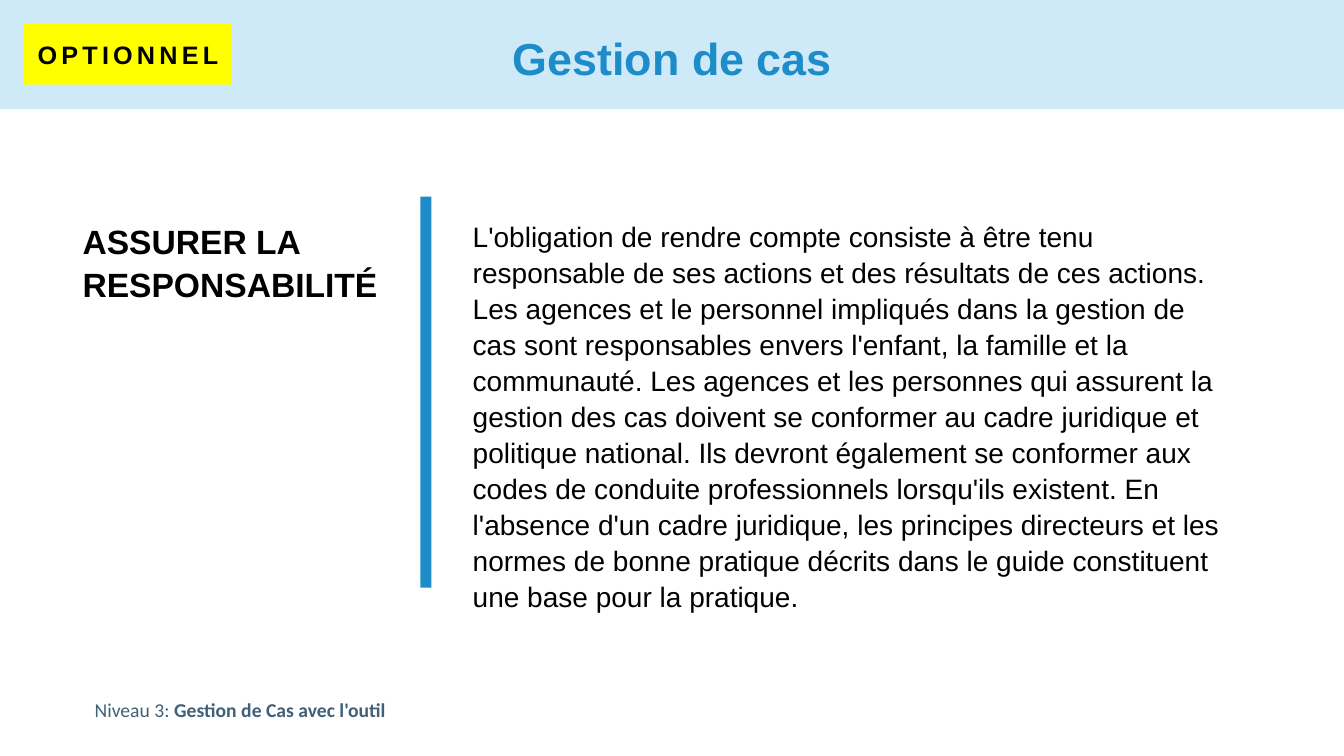
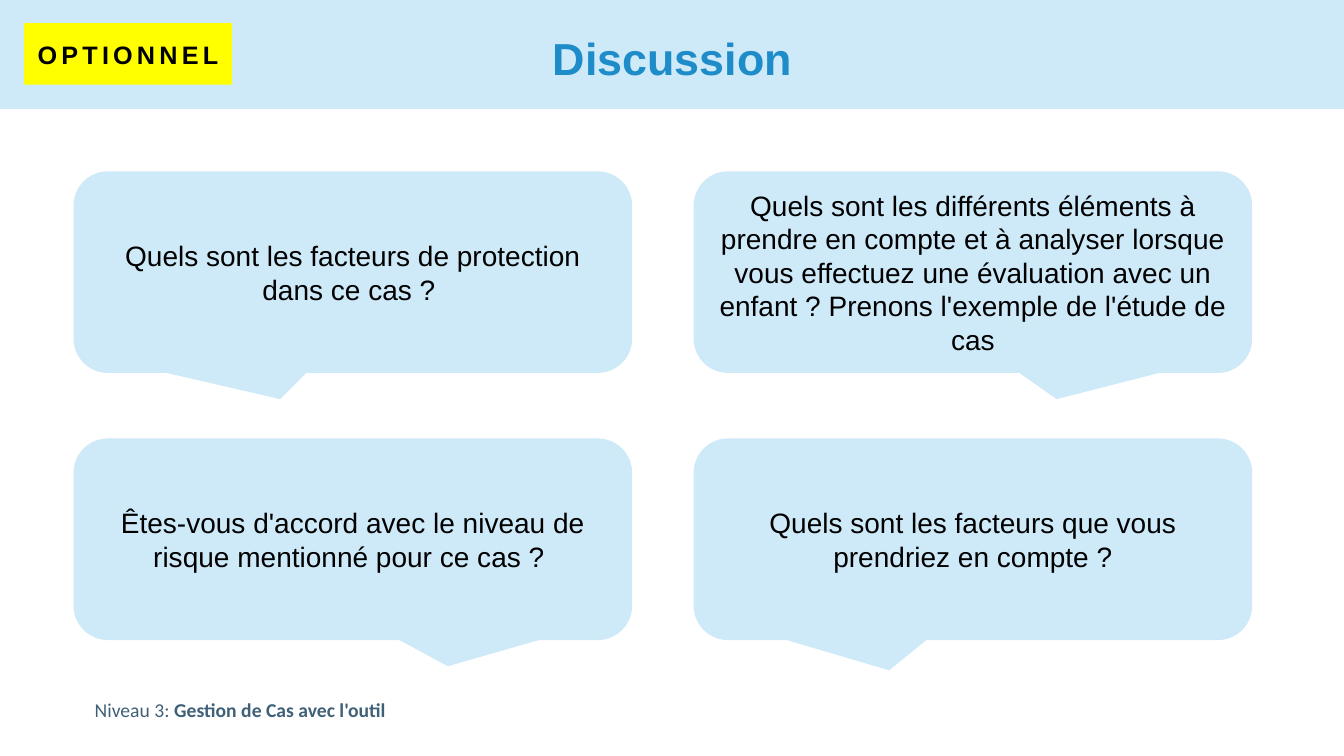
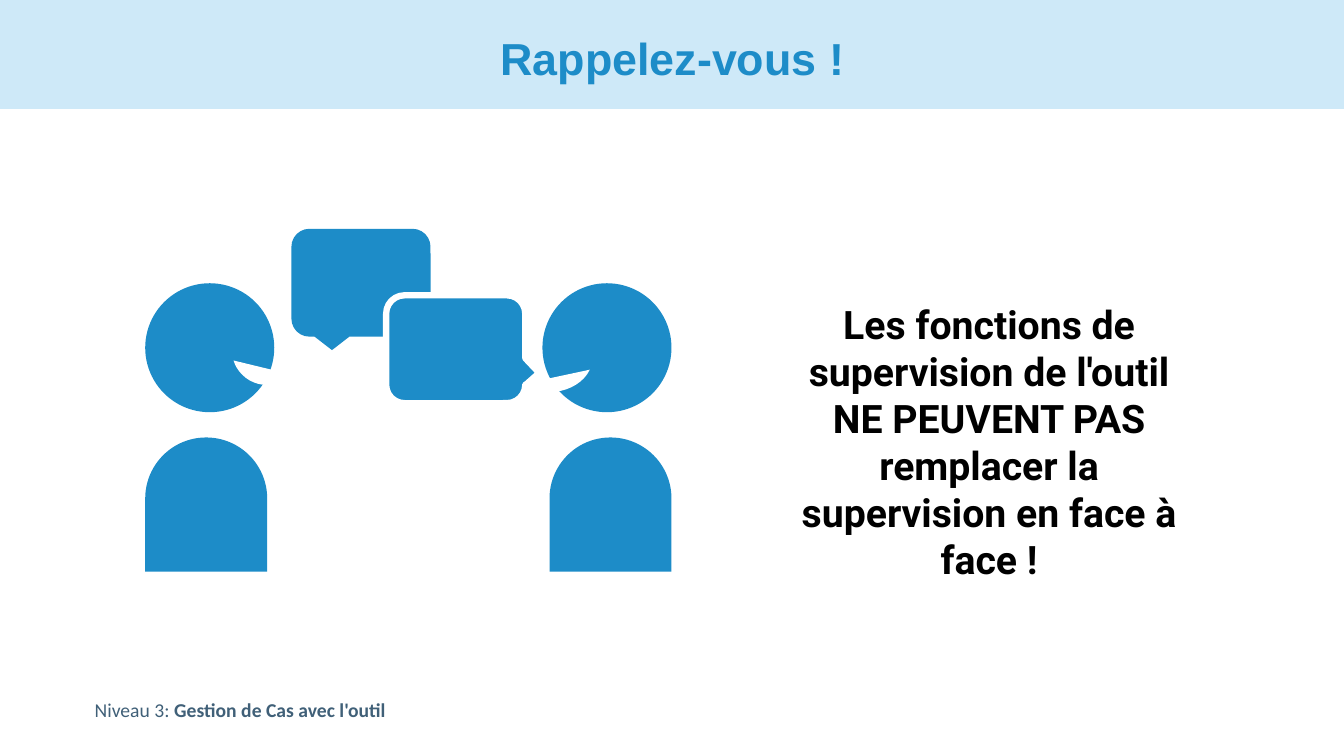
import pptx
import pptx.util
from pptx.dml.color import RGBColor
from pptx.enum.shapes import MSO_SHAPE
from pptx.enum.text import MSO_ANCHOR, MSO_AUTO_SIZE, PP_ALIGN
from pptx.util import Inches

PALE_BLUE = RGBColor(0xCE, 0xE9, 0xF8)
BLUE = RGBColor(0x1D, 0x8C, 0xC8)
SLATE = RGBColor(0x40, 0x60, 0x78)
YELLOW = RGBColor(0xFF, 0xFF, 0x00)
BLACK = RGBColor(0x00, 0x00, 0x00)
WHITE = RGBColor(0xFF, 0xFF, 0xFF)

TITLE_FONT = {"name": "Arial", "size": pptx.util.Pt(32), "bold": True}
HEADING_FONT = {"name": "Arial", "size": pptx.util.Pt(24), "bold": True}
BODY_FONT = {"name": "Arial", "size": pptx.util.Pt(20)}
BADGE_FONT = {"name": "Arial", "size": pptx.util.Pt(18), "bold": True}
FOOTER_FONT = {"name": "Calibri", "size": pptx.util.Pt(14)}
REMINDER_FONT = {"name": "Roboto", "size": pptx.util.Pt(28), "bold": True}

CENTRED = {"alignment": PP_ALIGN.CENTER}
SPACED = {"line_spacing": 1.07}

BODY_TEXT = (
    "L'obligation de rendre compte consiste à être tenu responsable de ses actions "
    "et des résultats de ces actions. Les agences et le personnel impliqués dans la "
    "gestion de cas sont responsables envers l'enfant, la famille et la communauté. "
    "Les agences et les personnes qui assurent la gestion des cas doivent se conformer "
    "au cadre juridique et politique national. Ils devront également se conformer aux "
    "codes de conduite professionnels lorsqu'ils existent. En l'absence d'un cadre "
    "juridique, les principes directeurs et les normes de bonne pratique décrits dans "
    "le guide constituent une base pour la pratique."
)

# Each question with the horizontal and vertical offset of its callout tip.
QUESTIONS = [
    ("Quels sont les facteurs de protection dans ce cas ? ", -0.13, 0.63),
    ("Quels sont les différents éléments à prendre en compte et à analyser lorsque "
     "vous effectuez une évaluation avec un enfant ? Prenons l'exemple de l'étude "
     "de cas", 0.15, 0.63),
    ("Êtes-vous d'accord avec le niveau de risque mentionné pour ce cas ? ", 0.17, 0.63),
    ("Quels sont les facteurs que vous prendriez en compte ?", -0.15, 0.65),
]


def apply_format(target, values):
    for name, value in values.items():
        setattr(target, name, value)


def lengths(*values):
    return [Inches(value) for value in values]


def add_span(para, text, font, colour):
    span = para.add_run()
    span.text = text
    apply_format(span.font, font)
    span.font.color.rgb = colour
    return span


def add_text(page, place, text, font, para_format):
    """Add a wrapping text box that grows with its text."""
    box = page.shapes.add_textbox(*lengths(*place))
    apply_format(box.text_frame, {"word_wrap": True,
                                  "auto_size": MSO_AUTO_SIZE.SHAPE_TO_FIT_TEXT})
    para = box.text_frame.paragraphs[0]
    apply_format(para, para_format)
    add_span(para, text, font, BLACK)
    return box


def add_filled(shapes, kind, place, colour, adjustments=()):
    """Add a flat preset shape without an outline."""
    shape = shapes.add_shape(kind, *lengths(*place))
    shape.shadow.inherit = False
    shape.fill.solid()
    shape.fill.fore_color.rgb = colour
    shape.line.fill.background()
    for index, value in enumerate(adjustments):
        shape.adjustments[index] = value
    return shape


def label_shape(shape, text, font):
    shape.text_frame.vertical_anchor = MSO_ANCHOR.MIDDLE
    para = shape.text_frame.paragraphs[0]
    apply_format(para, CENTRED)
    return add_span(para, text, font, BLACK)


def furnish_layout(layout, page):
    """Build the band and footer on a page, then move them to its layout."""
    band = add_filled(page.shapes, MSO_SHAPE.RECTANGLE, (0, 0, 13.33, 1.08), PALE_BLUE)
    footer = page.shapes.add_textbox(*lengths(0.84, 6.87, 4.55, 0.34))
    footer.text_frame.word_wrap = True
    para = footer.text_frame.paragraphs[0]
    add_span(para, "Niveau 3: ", FOOTER_FONT, SLATE)
    add_span(para, "Gestion de Cas avec l'outil", {**FOOTER_FONT, "bold": True}, SLATE)
    for position, shape in enumerate((band, footer), start=2):
        layout.shapes.element.insert(position, shape.element)


def add_page(deck, layout, title):
    page = deck.slides.add_slide(layout)
    box = page.shapes.title
    left, top, width, height = lengths(0.92, 0.13, 11.5, 0.95)
    apply_format(box, {"left": left, "top": top, "width": width, "height": height})
    box.text_frame.vertical_anchor = MSO_ANCHOR.MIDDLE
    para = box.text_frame.paragraphs[0]
    apply_format(para, {**CENTRED, "line_spacing": 0.9})
    add_span(para, title, TITLE_FONT, BLUE)
    return page


def add_optional_badge(page):
    badge = add_filled(page.shapes, MSO_SHAPE.RECTANGLE, (0.24, 0.23, 2.06, 0.61), YELLOW)
    badge.text_frame.word_wrap = False
    span = label_shape(badge, "OPTIONNEL", BADGE_FONT)
    span._r.get_or_add_rPr().set("spc", "300")


def add_questions(page):
    for index, (question, tip_x, tip_y) in enumerate(QUESTIONS):
        row, column = divmod(index, 2)
        place = (0.73 + 6.15 * column, 1.7 + 2.65 * row, 5.54, 2)
        callout = add_filled(page.shapes, MSO_SHAPE.ROUNDED_RECTANGULAR_CALLOUT, place,
                             PALE_BLUE, (tip_x, tip_y, 0.17))
        label_shape(callout, question, BODY_FONT)


def add_conversation(page):
    """Draw two facing people with speech bubbles between them."""
    shapes = page.shapes.add_group_shape().shapes
    for left in (1.44, 5.38):
        add_filled(shapes, MSO_SHAPE.OVAL, (left, 2.81, 1.28, 1.28), BLUE)
    for left in (1.44, 5.45):
        add_filled(shapes, MSO_SHAPE.ROUND_2_SAME_RECTANGLE, (left, 4.34, 1.21, 1.33),
                   BLUE, (0.5, 0))
    # Angles count 0.6 degrees a unit, so 108 minus an angle is its mirror image.
    start, end = 27, 97.34
    add_filled(shapes, MSO_SHAPE.CHORD, (2.3, 3.12, 0.7, 0.7), WHITE, (start, end))
    add_filled(shapes, MSO_SHAPE.CHORD, (5.02, 3.19, 0.86, 0.7), WHITE,
               (108 - end, 108 - start))
    bubble = MSO_SHAPE.ROUNDED_RECTANGULAR_CALLOUT
    add_filled(shapes, bubble, (2.89, 2.27, 1.38, 1.07), BLUE)
    reply = add_filled(shapes, bubble, (3.83, 2.93, 1.38, 1.07), BLUE, (0.6, 0.22, 0.17))
    reply.line.color.rgb = WHITE
    reply.line.width = pptx.util.Pt(4.5)


def main():
    deck = pptx.Presentation()
    apply_format(deck, {"slide_width": Inches(13.33), "slide_height": Inches(7.5)})
    layout = deck.slide_layouts[5]

    page = add_page(deck, layout, "Gestion de cas")
    furnish_layout(layout, page)
    add_text(page, (4.59, 2.11, 7.65, 4.04), BODY_TEXT, BODY_FONT,
             {**SPACED, "space_after": pptx.util.Pt(8)})
    add_text(page, (0.72, 2.11, 3.15, 0.93), "ASSURER LA RESPONSABILITÉ", HEADING_FONT, SPACED)
    add_filled(page.shapes, MSO_SHAPE.RECTANGLE, (4.17, 1.95, 0.11, 3.88), BLUE)
    add_optional_badge(page)

    page = add_page(deck, layout, "Discussion")
    add_questions(page)
    add_optional_badge(page)

    page = add_page(deck, layout, "Rappelez-vous !")
    add_text(page, (7.73, 2.93, 4.16, 1.99),
             "Les fonctions de supervision de l'outil NE PEUVENT PAS remplacer la "
             "supervision en face à face !", REMINDER_FONT, CENTRED)
    add_conversation(page)

    deck.save("out.pptx")


if __name__ == "__main__":
    main()
